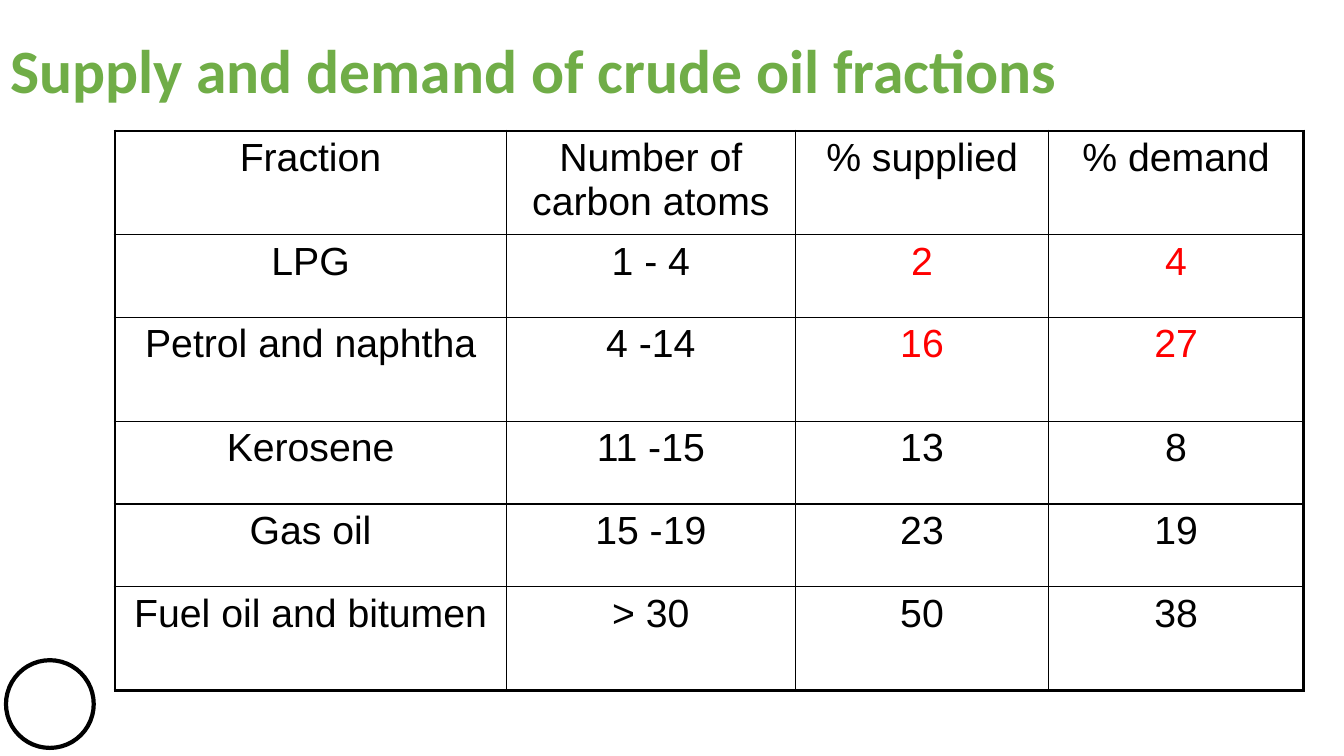
import pptx
import pptx.dml.color
import pptx.enum.shapes
import pptx.enum.text
import pptx.oxml
import pptx.oxml.ns
import pptx.util
from dataclasses import dataclass
from pptx.util import Inches


@dataclass(frozen=True)
class Theme:
    ink: str = "000000"
    paper: str = "FFFFFF"
    heading: str = "70AD47"
    shortage: str = "FF0000"
    heading_font: str = "Calibri"
    body_font: str = "Arial"
    heading_size: int = 44
    body_size: int = 28
    outer_line: float = 2.25
    inner_line: float = 1
    circle_line: float = 3


theme = Theme()


def set_font(paragraph, name, size, color, bold=False):
    paragraph.font.name = name
    paragraph.font.size = pptx.util.Pt(size)
    paragraph.font.bold = bold
    paragraph.font.color.rgb = pptx.dml.color.RGBColor.from_string(color)


def set_borders(cell, widths):
    properties = cell._tc.get_or_add_tcPr()
    for position, (side, width) in enumerate(widths.items()):
        border = pptx.oxml.parse_xml(
            f'<a:ln{side} {pptx.oxml.ns.nsdecls("a")} w="{int(pptx.util.Pt(width))}">'
            f'<a:solidFill><a:srgbClr val="{theme.ink}"/></a:solidFill></a:ln{side}>'
        )
        properties.insert(position, border)


deck = pptx.Presentation()
deck.slide_width = Inches(13.33)
deck.slide_height = Inches(7.5)
slide = deck.slides.add_slide(deck.slide_layouts[5])

title = slide.shapes.title
title.left, title.top = Inches(0), Inches(0)
title.width, title.height = Inches(12.42), Inches(1.45)
title.text_frame.text = "Supply and demand of crude oil fractions"
title.text_frame.vertical_anchor = pptx.enum.text.MSO_ANCHOR.MIDDLE
heading = title.text_frame.paragraphs[0]
heading.alignment = pptx.enum.text.PP_ALIGN.LEFT
heading.line_spacing = 0.9
set_font(heading, theme.heading_font, theme.heading_size, theme.heading, bold=True)

circle = slide.shapes.add_shape(
    pptx.enum.shapes.MSO_SHAPE.OVAL, Inches(0.06), Inches(6.55), Inches(0.87), Inches(0.87)
)
circle.shadow.inherit = False
circle.fill.solid()
circle.fill.fore_color.rgb = pptx.dml.color.RGBColor.from_string(theme.paper)
circle.line.color.rgb = pptx.dml.color.RGBColor.from_string(theme.ink)
circle.line.width = pptx.util.Pt(theme.circle_line)

fractions = [
    ("Fraction", "Number of carbon atoms", "% supplied", "% demand"),
    ("LPG", "1 - 4", "2", "4"),
    ("Petrol and naphtha", "4 -14", "16", "27"),
    ("Kerosene", "11 -15", "13", "8"),
    ("Gas oil", "15 -19", "23", "19"),
    ("Fuel oil and bitumen", "> 30", "50", "38"),
]
column_widths = [3.88, 2.87, 2.51, 2.53]
row_heights = [1.03, 0.82, 1.03, 0.82, 0.82, 1.03]
last_row, last_column = len(row_heights) - 1, len(column_widths) - 1

supply_table = slide.shapes.add_table(
    len(row_heights), len(column_widths),
    Inches(1.14), Inches(1.3), Inches(sum(column_widths)), Inches(sum(row_heights)),
).table
supply_table.first_row = False
supply_table.horz_banding = False
for column, width in zip(supply_table.columns, column_widths):
    column.width = Inches(width)

for r, fraction in enumerate(fractions):
    supply_table.rows[r].height = Inches(row_heights[r])
    for c, entry in enumerate(fraction):
        cell = supply_table.cell(r, c)
        cell.text = entry
        cell.fill.background()
        paragraph = cell.text_frame.paragraphs[0]
        paragraph.alignment = pptx.enum.text.PP_ALIGN.CENTER
        in_shortage = r > 0 and c >= 2 and int(fraction[3]) > int(fraction[2])
        color = theme.shortage if in_shortage else theme.ink
        set_font(paragraph, theme.body_font, theme.body_size, color)
        on_edge = {"L": c == 0, "R": c == last_column, "T": r == 0, "B": r == last_row}
        set_borders(cell, {
            side: theme.outer_line if edge else theme.inner_line
            for side, edge in on_edge.items()
        })

deck.save("out.pptx")
